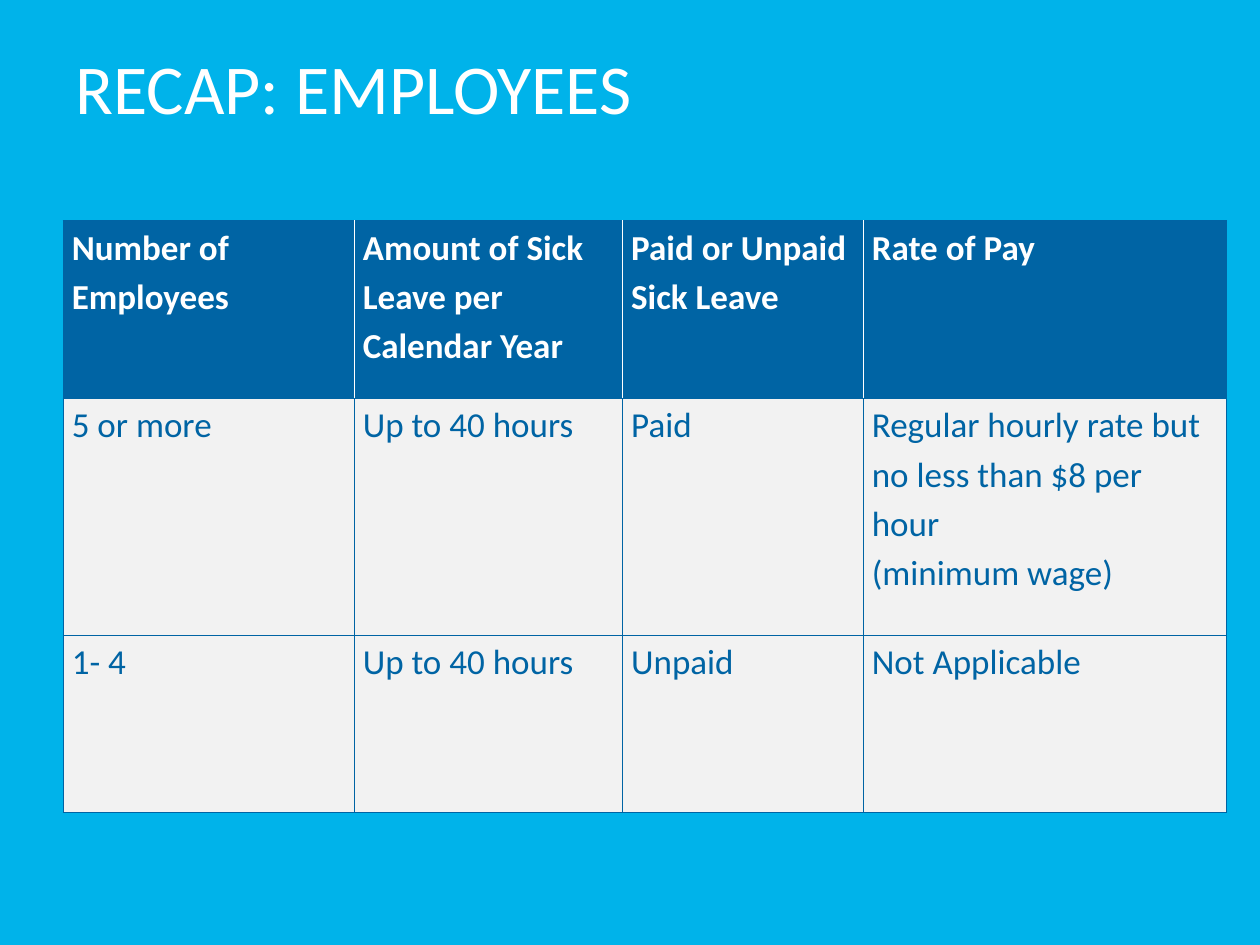
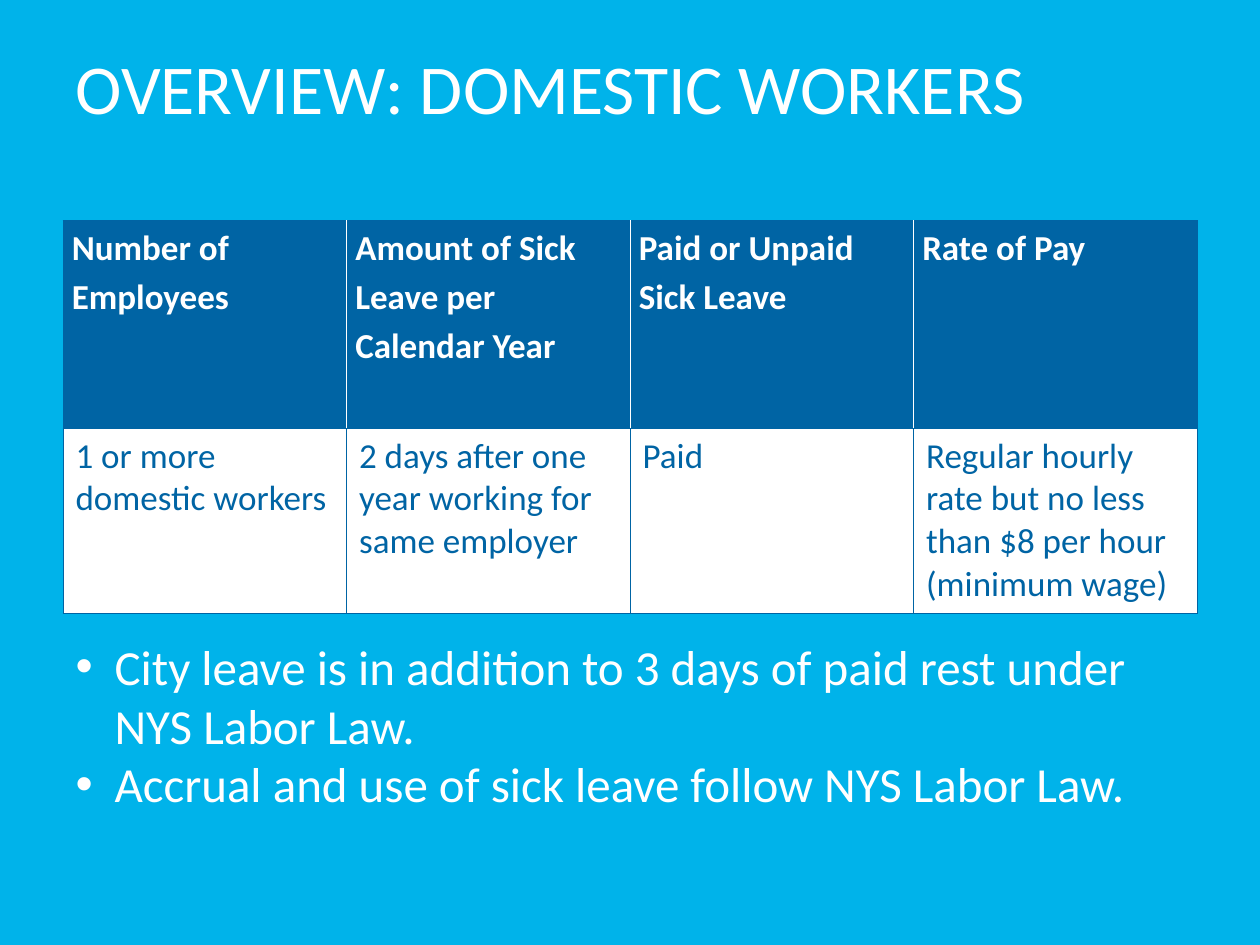
"""Build two slides that summarise sick leave rules for employees and domestic workers."""
from lxml.etree import SubElement
from pptx import Presentation
from pptx.dml.color import RGBColor
from pptx.enum.text import MSO_ANCHOR, MSO_AUTO_SIZE, PP_ALIGN
from pptx.oxml.ns import qn
from pptx.util import Inches, Pt

COLORS = {"sky": "00B3EA", "navy": "0064A4", "white": "FFFFFF", "grey": "F2F2F2"}
FONT = "Calibri"
HEADINGS = ["Number of Employees", "Amount of Sick Leave per Calendar Year",
            "Paid or Unpaid Sick Leave", "Rate of Pay"]
HOURLY_RATE = "Regular hourly rate but no less than $8 per hour\n(minimum wage)"
TOPICS = [
    {"title": "RECAP: EMPLOYEES", "layout": 5, "fill": "grey", "compact": True,
     "widths": [2.31, 2.13, 1.91, 2.88], "heights": [1.41, 1.88, 1.41],
     "rules": [["5 or more", "Up to 40 hours", "Paid", HOURLY_RATE],
               ["1- 4", "Up to 40 hours", "Unpaid", "Not Applicable"]],
     "notes": []},
    {"title": "OVERVIEW: DOMESTIC WORKERS", "layout": 1, "fill": "white", "compact": False,
     "widths": [2.25] * 4, "heights": [1.65, 1.47],
     "rules": [["1 or more domestic workers",
                "2 days after one year working for same employer", "Paid", HOURLY_RATE]],
     "notes": ["City leave is in addition to 3 days of paid rest under NYS Labor Law.",
               "Accrual and use of sick leave follow NYS Labor Law."]},
]


def style_text(paragraph, size, color, bold=False):
    for run in paragraph.runs:
        run.font.name = FONT
        run.font.size = Pt(size)
        run.font.bold = bold
        run.font.color.rgb = RGBColor.from_string(COLORS[color])


def add_border(cell, side, color):
    line = SubElement(cell._tc.get_or_add_tcPr(), qn(f"a:ln{side}"), w=str(Pt(0.5)))
    SubElement(SubElement(line, qn("a:solidFill")), qn("a:srgbClr"), val=COLORS[color])


prs = Presentation()
prs.slide_width, prs.slide_height = Inches(10), Inches(7.5)
background = prs.slide_master.background.fill
background.solid()
background.fore_color.rgb = RGBColor.from_string(COLORS["sky"])

for topic in TOPICS:
    slide = prs.slides.add_slide(prs.slide_layouts[topic["layout"]])
    title = slide.shapes.title
    title.left, title.top, title.width, title.height = map(Inches, (0.5, 0.3, 9, 1.25))
    title.text_frame.text = topic["title"]
    title.text_frame.vertical_anchor = MSO_ANCHOR.TOP
    title.text_frame.auto_size = MSO_AUTO_SIZE.NONE
    title.text_frame.paragraphs[0].alignment = PP_ALIGN.LEFT
    style_text(title.text_frame.paragraphs[0], 40, "white")

    rows = [HEADINGS] + topic["rules"]
    leave_table = slide.shapes.add_table(
        len(rows), len(HEADINGS), Inches(0.5), Inches(1.75),
        Inches(sum(topic["widths"])), Inches(sum(topic["heights"]))).table
    for column, width in zip(leave_table.columns, topic["widths"]):
        column.width = Inches(width)
    for row, height in zip(leave_table.rows, topic["heights"]):
        row.height = Inches(height)

    for r, row in enumerate(rows):
        is_heading = r == 0
        is_compact = is_heading or topic["compact"]
        for c, wording in enumerate(row):
            cell = leave_table.cell(r, c)
            add_border(cell, "L", "white" if is_heading and c > 0 else "navy")
            add_border(cell, "R", "white" if is_heading and c < len(row) - 1 else "navy")
            add_border(cell, "T", "navy")
            add_border(cell, "B", "navy")
            cell.fill.solid()
            cell.fill.fore_color.rgb = RGBColor.from_string(
                COLORS["navy" if is_heading else topic["fill"]])
            cell.text_frame.text = wording
            if is_compact:
                cell.margin_left = cell.margin_right = Inches(0.07)
                cell.margin_top = cell.margin_bottom = 0
            for paragraph in cell.text_frame.paragraphs:
                paragraph.line_spacing = 1.15 if is_compact else 1.0
                style_text(paragraph, 20, "white" if is_heading else "navy", is_heading)

    if topic["notes"]:
        notes = slide.placeholders[1]
        notes.left, notes.top, notes.width, notes.height = map(Inches, (0.5, 5, 9, 1.51))
        notes.text_frame.text = "\n".join(topic["notes"])
        notes.text_frame.auto_size = MSO_AUTO_SIZE.NONE
        for paragraph in notes.text_frame.paragraphs:
            properties = paragraph._p.get_or_add_pPr()
            properties.set("marL", str(Inches(0.31)))
            properties.set("indent", str(Inches(-0.31)))
            SubElement(properties, qn("a:buFont"), typeface="Arial")
            SubElement(properties, qn("a:buChar"), char="•")
            paragraph.space_before = Pt(0)
            style_text(paragraph, 28, "white")

prs.save("out.pptx")
